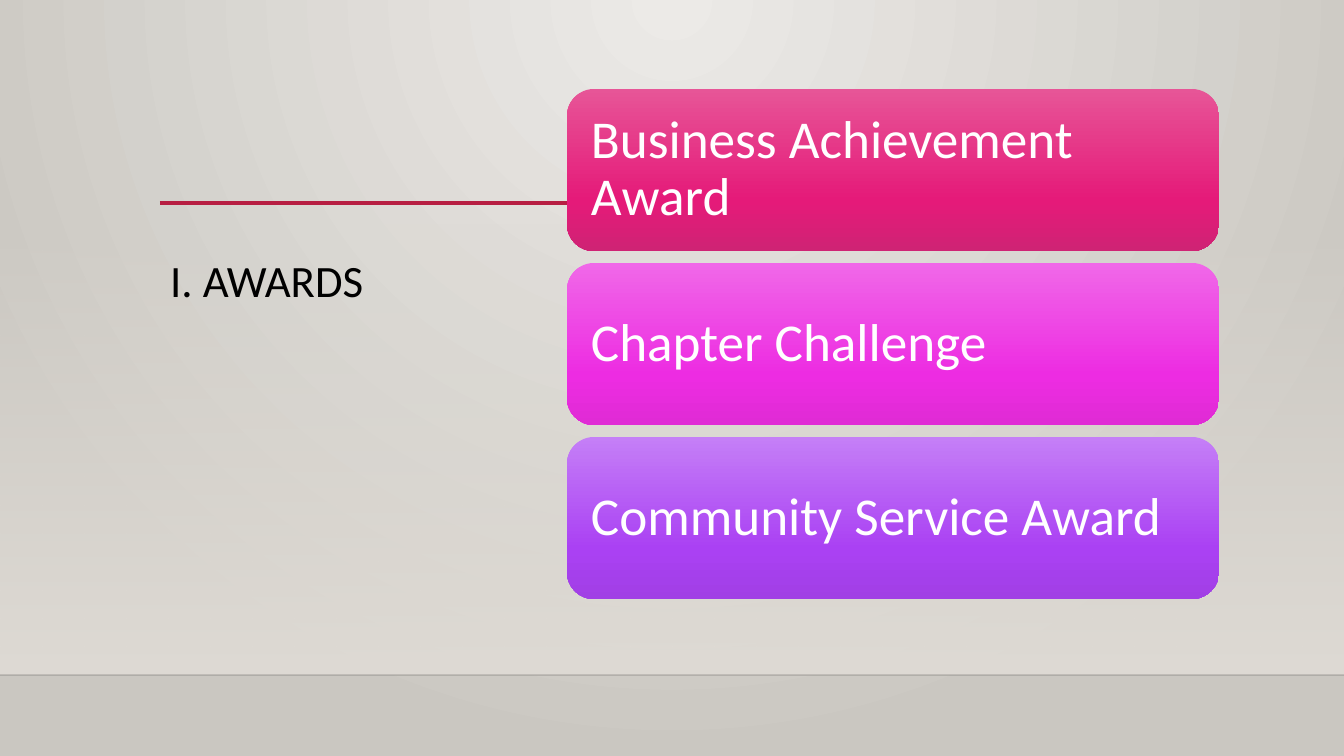
from lxml import etree
from pptx import Presentation
from pptx import util as u
from pptx.dml.color import RGBColor
from pptx.enum import shapes, text
from pptx.oxml.ns import qn

EMU_PER_PX = 12192000 / 1344
WIDTH, HEIGHT = 1344, 756
FLOOR_TOP = 675
FONT = "Calibri"
BLACK = RGBColor(0x00, 0x00, 0x00)
WHITE = RGBColor(0xFF, 0xFF, 0xFF)
CRIMSON = RGBColor(0xB7, 0x1E, 0x42)
WALL = RGBColor(0xDF, 0xDB, 0xD5)
GLOW = RGBColor(0xEC, 0xEA, 0xE7)
EDGE = RGBColor(0xCA, 0xC7, 0xC1)
PINK = (RGBColor(0xE7, 0x55, 0x97), RGBColor(0xE5, 0x1A, 0x79), RGBColor(0xCF, 0x23, 0x74))
MAGENTA = (RGBColor(0xF0, 0x68, 0xE8), RGBColor(0xED, 0x2C, 0xE2), RGBColor(0xE0, 0x2B, 0xD5))
PURPLE = (RGBColor(0xC5, 0x7F, 0xF7), RGBColor(0xAA, 0x41, 0xF3), RGBColor(0xA1, 0x3F, 0xE5))
AWARDS = [
    ("Business Achievement Award", PINK),
    ("Chapter Challenge", MAGENTA),
    ("Community Service Award", PURPLE),
]


def px(length):
    """Turn pixels into EMU."""
    return u.Emu(round(length * EMU_PER_PX))


def add_element(parent, tag, **attributes):
    """Append a drawing element with the given attributes."""
    element = etree.SubElement(parent, qn(tag))
    for name, value in attributes.items():
        element.set(name, str(value))
    return element


def set_gradient(properties, stops, radial=False):
    """Replace a solid fill by a gradient of (percent, colour, opacity) stops."""
    gradient = etree.Element(qn("a:gradFill"), rotWithShape="1")
    stop_list = add_element(gradient, "a:gsLst")
    for position, colour, opacity in stops:
        stop = add_element(stop_list, "a:gs", pos=position * 1000)
        tint = add_element(stop, "a:srgbClr", val=colour)
        if opacity < 100:
            add_element(tint, "a:alpha", val=opacity * 1000)
    if radial:
        circle = add_element(gradient, "a:path", path="circle")
        add_element(circle, "a:fillToRect", l=43000, t=0, r=43000, b=100000)
    else:
        add_element(gradient, "a:lin", ang=5400000, scaled=0)
    properties.replace(properties.find(qn("a:solidFill")), gradient)


def add_block(slide, kind, box, stops):
    """Add an unlined shape with a vertical gradient."""
    shape = slide.shapes.add_shape(kind, *map(px, box))
    shape.shadow.inherit = False
    shape.line.fill.background()
    shape.fill.solid()
    set_gradient(shape.element.spPr, stops)
    return shape


def add_rule(slide, left, right, top, colour, weight):
    """Add a horizontal line."""
    rule = slide.shapes.add_connector(
        shapes.MSO_CONNECTOR.STRAIGHT, px(left), px(top), px(right), px(top))
    rule.line.color.rgb = colour
    rule.line.width = u.Pt(weight)
    add_element(rule.element.spPr, "a:effectLst")
    return rule


def format_text(frame, size, colour):
    """Give all text of a frame its font and spacing."""
    frame.word_wrap = True
    frame.auto_size = text.MSO_AUTO_SIZE.NONE
    for paragraph in frame.paragraphs:
        paragraph.alignment = text.PP_ALIGN.LEFT
        paragraph.line_spacing = 0.9
        for run in paragraph.runs:
            run.font.name = FONT
            run.font.size = u.Pt(size)
            run.font.color.rgb = colour


def draw_backdrop(slide, box):
    """Paint the wall, the floor edge and the glow behind them."""
    left, top, width, height = box
    slide.background.fill.solid()
    set_gradient(slide.element.xpath(".//p:bgPr")[0],
                 [(0, GLOW, 100), (100, EDGE, 100)], radial=True)
    add_block(slide, shapes.MSO_SHAPE.RECTANGLE, box, [(0, WALL, 0), (100, WALL, 100)])
    floor_edge = add_rule(slide, left, left + width, top + height, BLACK, 1)
    colour = floor_edge.element.xpath(".//a:ln//a:srgbClr")[0]
    add_element(colour, "a:alpha", val=20000)


def place_title(slide, box, wording):
    """Place the title in front of the backdrop."""
    title = slide.shapes.title
    title.element.getparent().append(title.element)
    title.left, title.top, title.width, title.height = map(px, box)
    title.text_frame.text = wording
    title.text_frame.vertical_anchor = text.MSO_ANCHOR.TOP
    format_text(title.text_frame, 32, BLACK)


def draw_awards(slide, box, awards, gap):
    """Stack one rounded card per award in the box."""
    left, top, width, height = box
    card_height = (height - gap * (len(awards) - 1)) // len(awards)
    for index, (award, colours) in enumerate(awards):
        card_top = top + index * (card_height + gap)
        stops = [(position, colour, 100) for position, colour in zip((0, 69, 100), colours)]
        card = add_block(slide, shapes.MSO_SHAPE.ROUNDED_RECTANGLE,
                         (left, card_top, width, card_height), stops)
        frame = card.text_frame
        frame.text = award
        frame.vertical_anchor = text.MSO_ANCHOR.MIDDLE
        frame.margin_left = frame.margin_right = px(16)
        frame.margin_top = frame.margin_bottom = px(16)
        format_text(frame, 38, WHITE)


def main():
    """Build and save the awards slide."""
    presentation = Presentation()
    presentation.slide_width, presentation.slide_height = px(WIDTH), px(HEIGHT)
    slide = presentation.slides.add_slide(presentation.slide_layouts.get_by_name("Title Only"))
    draw_backdrop(slide, (0, 223, WIDTH, FLOOR_TOP - 223))
    add_rule(slide, 160, 1219, 203, CRIMSON, 2.5)
    place_title(slide, (160, 254, 361, 294), "I. AWARDS")
    draw_awards(slide, (567, 89, 652, 510), AWARDS, gap=12)
    presentation.save("out.pptx")


if __name__ == "__main__":
    main()
